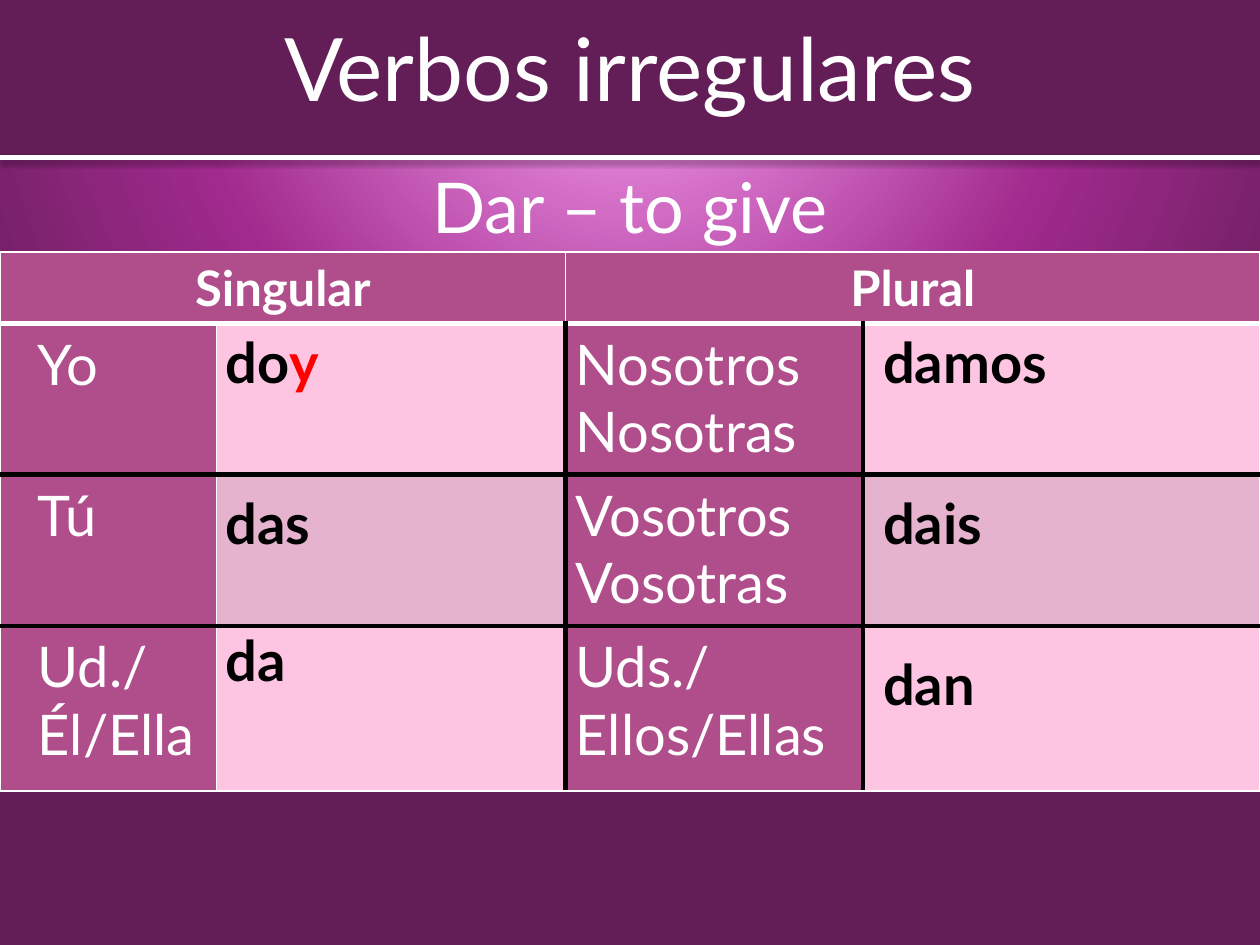
from dataclasses import dataclass
from typing import Optional

from lxml import etree
from pptx import Presentation
from pptx import util as u
from pptx.dml.color import RGBColor
from pptx.enum import shapes, text
from pptx.oxml import parse_xml
from pptx.oxml.ns import nsdecls, qn


@dataclass(frozen=True)
class Theme:
    font: str = "Lato"
    dark: str = "631D57"
    mid: str = "A02A8D"
    glow: str = "FEA8F7"
    header: str = "B04D8B"
    band_a: str = "FEC5E2"
    band_b: str = "E5B3CE"
    white: str = "FFFFFF"
    black: str = "000000"
    accent: str = "FF0000"
    title: int = 50
    subtitle: int = 40
    heading: int = 28
    body: int = 32
    thin: int = 1
    thick: int = 3
    no_style: str = "{2D5ABB26-0587-4C30-8999-92F81FD0307C}"


@dataclass(frozen=True)
class Verb:
    stem: str
    left: float
    top: float
    width: float
    ending: str = ""


T = Theme()
COLS = [1.72, 2.77, 2.36, 3.15]
ROWS = [0.56, 1.2, 1.2, 1.31]
PRONOUNS = [
    (["Yo"], ["Nosotros", "Nosotras"]),
    (["Tú"], ["Vosotros", "Vosotras"]),
    (["Ud./", "Él/Ella"], ["Uds./Ellos/Ellas"]),
]
VERBS = [
    Verb("do", 1.71, 2.55, 2.46, "y"),
    Verb("das", 1.71, 3.83, 2.34),
    Verb("da", 1.71, 4.92, 2.46),
    Verb("damos", 6.93, 2.55, 2.82),
    Verb("dais", 6.93, 3.83, 2.52),
    Verb("dan", 6.93, 5.11, 2.4),
]


def rgb(color: str) -> RGBColor:
    return RGBColor.from_string(color)


def write(tf, lines: list, size: int, color: str, bold: bool = False, center: bool = False) -> None:
    for i, line in enumerate(lines):
        p = tf.paragraphs[0] if i == 0 else tf.add_paragraph()
        p.alignment = text.PP_ALIGN.CENTER if center else text.PP_ALIGN.LEFT
        p.font.name, p.font.size, p.font.bold = T.font, u.Pt(size), bold
        p.font.color.rgb = rgb(color)
        p.add_run().text = line


def add_text(s, line: str, top: float, height: float, size: int, anchor) -> None:
    tf = s.shapes.add_textbox(0, u.Inches(top), u.Inches(10), u.Inches(height)).text_frame
    tf.word_wrap = True
    tf.vertical_anchor = anchor
    write(tf, [line], size, T.white, center=True)


def add_table(s, left: float, top: float, cols: list, rows: list):
    frame = s.shapes.add_table(len(rows), len(cols), u.Inches(left), u.Inches(top),
                               u.Inches(sum(cols)), u.Inches(sum(rows)))
    table = frame.table
    table.first_row = table.horz_banding = False
    table._tbl.tblPr.find(qn("a:tableStyleId")).text = T.no_style
    for col, width in zip(table.columns, cols):
        col.width = u.Inches(width)
    for row, height in zip(table.rows, rows):
        row.height = u.Inches(height)
    for cell in table.iter_cells():
        cell.margin_left = cell.margin_right = u.Inches(0.08)
    return table


def style_cell(cell, fill: str, borders: dict) -> None:
    cell.fill.solid()
    cell.fill.fore_color.rgb = rgb(fill)
    tc_pr = cell._tc.get_or_add_tcPr()
    for i, side in enumerate("LRTB"):
        color, width = borders.get(side, (T.white, T.thin))
        tc_pr.insert(i, parse_xml(
            f'<a:ln{side} {nsdecls("a")} w="{u.Pt(width)}"><a:solidFill>'
            f'<a:srgbClr val="{color}"/></a:solidFill></a:ln{side}>'))


def set_background(s) -> None:
    s.background.fill.gradient()
    grad = s.background._cSld.bg.bgPr.find(qn("a:gradFill"))
    stops = "".join(f'<a:gs pos="{pos * 1000}"><a:srgbClr val="{color}"/></a:gs>'
                    for pos, color in ((0, T.glow), (57, T.mid), (100, T.dark)))
    grad.getparent().replace(grad, parse_xml(
        f'<a:gradFill {nsdecls("a")} rotWithShape="1"><a:gsLst>{stops}</a:gsLst>'
        '<a:path path="circle"><a:fillToRect l="50000" t="-80000" r="50000" b="180000"/>'
        '</a:path></a:gradFill>'))


def add_banner(s) -> None:
    sp = s.shapes.add_shape(shapes.MSO_SHAPE.RECTANGLE, 0, 0, u.Inches(10), u.Inches(1.25))
    sp.shadow.inherit = False
    sp.fill.solid()
    sp.fill.fore_color.rgb = rgb(T.dark)
    sp.line.fill.background()


def add_rule(s) -> None:
    y = u.Inches(1.25)
    rule = s.shapes.add_connector(shapes.MSO_CONNECTOR.STRAIGHT, 0, y, u.Inches(10), y)
    rule.line.color.rgb = rgb(T.white)
    rule.line.width = u.Pt(T.thick)
    effects = etree.SubElement(rule._element.spPr, qn("a:effectLst"))
    shadow = etree.SubElement(effects, qn("a:outerShdw"), blurRad=str(u.Pt(3.1)),
                              dist=str(u.Pt(1.6)), dir="5400000", rotWithShape="0")
    color = etree.SubElement(shadow, qn("a:srgbClr"), val=T.black)
    etree.SubElement(color, qn("a:alpha"), val="38000")


def body_borders(row: int, col: int) -> dict:
    black, white = (T.black, T.thick), (T.white, T.thick)
    borders = {"T": white if row == 1 else black}
    if row < len(ROWS) - 1:
        borders["B"] = black
    if col >= 2:
        borders["L"] = black
    if col in (1, 2):
        borders["R"] = black
    return borders


def add_pronouns(s) -> None:
    table = add_table(s, 0, 2, COLS, ROWS)
    for col, heading in ((0, "Singular"), (2, "Plural")):
        for cell in (table.cell(0, col), table.cell(0, col + 1)):
            style_cell(cell, T.header, {"B": (T.white, T.thick)})
        table.cell(0, col).merge(table.cell(0, col + 1))
        write(table.cell(0, col).text_frame, [heading], T.heading, T.white, True, True)
    for row, pair in enumerate(PRONOUNS, 1):
        band = T.band_a if row % 2 else T.band_b
        for col in range(len(COLS)):
            cell = table.cell(row, col)
            style_cell(cell, band if col % 2 else T.header, body_borders(row, col))
            if col % 2 == 0:
                write(cell.text_frame, pair[col // 2], T.body, T.white)
        table.cell(row, 0).margin_left = u.Inches(0.3)


def add_verb(s, verb: Verb) -> None:
    cell = add_table(s, verb.left, verb.top, [verb.width], [0.63]).cell(0, 0)
    cell.fill.background()
    write(cell.text_frame, [verb.stem], T.body, T.black, bold=True)
    if verb.ending:
        r = cell.text_frame.paragraphs[0].add_run()
        r.text = verb.ending
        r.font.color.rgb = rgb(T.accent)


def main() -> None:
    prs = Presentation()
    prs.slide_width, prs.slide_height = u.Inches(10), u.Inches(7.5)
    s = prs.slides.add_slide(prs.slide_layouts[6])
    set_background(s)
    add_banner(s)
    add_text(s, "Dar – to give", 1.25, 0.75, T.subtitle, text.MSO_ANCHOR.TOP)
    add_rule(s)
    add_text(s, "Verbos irregulares", 0, 1.06, T.title, text.MSO_ANCHOR.MIDDLE)
    add_pronouns(s)
    for verb in VERBS:
        add_verb(s, verb)
    prs.save("out.pptx")


if __name__ == "__main__":
    main()
